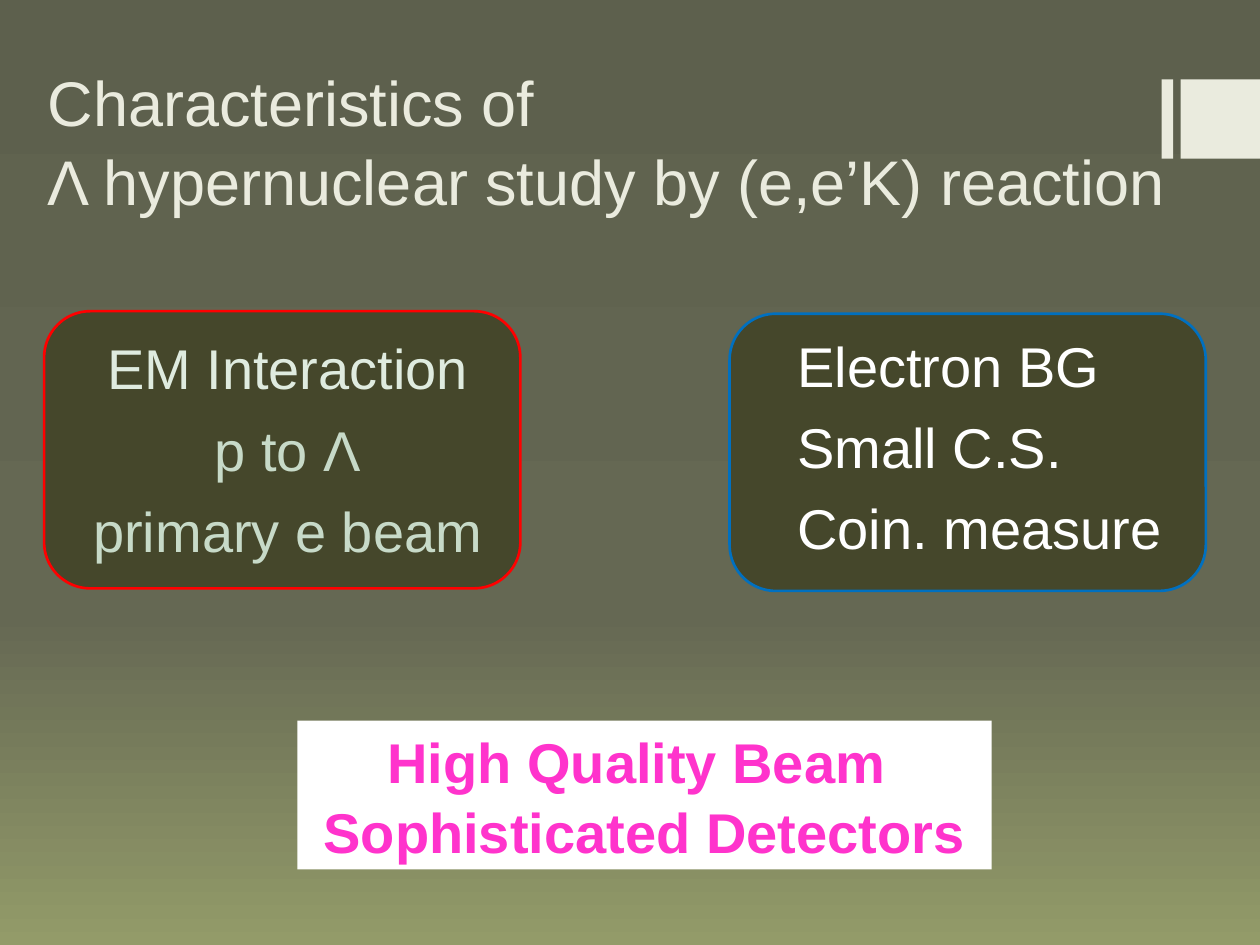
import copy

import pptx
import pptx.util
from pptx.dml.color import RGBColor
from pptx.enum.shapes import MSO_SHAPE
from pptx.enum.text import MSO_ANCHOR, MSO_AUTO_SIZE, PP_ALIGN
from pptx.util import Inches

# Content
TITLE = "Characteristics of \vΛ hypernuclear study by (e,e’K) reaction"
CREAM = "EAEBDE"
BACKGROUND = [(0, "5D604D"), (0.65, "656853"), (1, "939B69")]
MARKERS = [(9.22, 0.63, 0.09, 0.63), (9.37, 0.63, 0.63, 0.63)]
PANELS = [
    {
        "box": (0.35, 2.47, 3.78, 2.2), "border": "FF0000",
        "text_box": (0.35, 2.58, 3.82, 2.13), "align": PP_ALIGN.CENTER,
        "lines": [("EM Interaction", "DFEBDF"), ("p to Λ", "C7DAC8"),
                  ("primary e beam", "C7DAC8")],
    },
    {
        "box": (5.79, 2.49, 3.78, 2.2), "border": "0070C0",
        "text_box": (6.18, 2.56, 3.39, 2.13), "align": PP_ALIGN.LEFT,
        "lines": [("Electron BG", "FFFFFF"), ("Small C.S.", "FFFFFF"),
                  ("Coin. measure", "FFFFFF")],
    },
]
CONCLUSION_BOX = (2.36, 5.72, 5.51, 1.18)
CONCLUSION = [("High Quality Beam ", "FF33CC"), ("Sophisticated Detectors", "FF33CC")]


def rgb(value):
    return RGBColor.from_string(value)


def add_block(slide, kind, box, fill, border=None):
    block = slide.shapes.add_shape(kind, *map(Inches, box))
    block.shadow.inherit = False
    block.fill.solid()
    block.fill.fore_color.rgb = rgb(fill)
    if border:
        block.line.color.rgb = rgb(border)
        block.line.width = pptx.util.Pt(1.5)
    else:
        block.line.fill.background()
    return block


def write_lines(frame, lines, size, align, gap=0, margin=0, bold=False):
    frame.word_wrap = True
    for index, (text, color) in enumerate(lines):
        paragraph = frame.paragraphs[0] if index == 0 else frame.add_paragraph()
        paragraph.text = text
        paragraph.alignment = align
        paragraph.line_spacing = 1.04
        if index and gap:
            paragraph.space_before = pptx.util.Pt(gap)
        if margin:
            paragraph._p.get_or_add_pPr().set("marL", str(Inches(margin)))
        paragraph.font.name = "Arial"
        paragraph.font.size = pptx.util.Pt(size)
        paragraph.font.bold = bold
        paragraph.font.color.rgb = rgb(color)


def main():
    deck = pptx.Presentation()
    deck.slide_width, deck.slide_height = Inches(10), Inches(7.5)
    slide = deck.slides.add_slide(deck.slide_layouts[5])

    # Background: three stops, top to bottom
    backdrop = slide.background.fill
    backdrop.gradient()
    backdrop.gradient_angle = 270
    stop_list = slide.element.find(".//" + pptx.oxml.ns.qn("a:gsLst"))
    stop_list.append(copy.deepcopy(stop_list[0]))
    for stop, (position, color) in zip(backdrop.gradient_stops, BACKGROUND):
        stop.position = position
        stop.color.rgb = rgb(color)

    # Markers at the right edge
    for box in MARKERS:
        add_block(slide, MSO_SHAPE.RECTANGLE, box, CREAM)

    # Title
    title = slide.shapes.title
    title.left, title.top, title.width, title.height = map(Inches, (0.28, 0.52, 9.29, 1.26))
    title.text_frame.auto_size = MSO_AUTO_SIZE.NONE
    title.text_frame.vertical_anchor = MSO_ANCHOR.BOTTOM
    write_lines(title.text_frame, [(TITLE, CREAM)], 36, PP_ALIGN.LEFT)

    # Panels of advantages and difficulties
    for panel in PANELS:
        add_block(slide, MSO_SHAPE.ROUNDED_RECTANGLE, panel["box"], "45472B", panel["border"])
        label = slide.shapes.add_textbox(*map(Inches, panel["text_box"]))
        write_lines(label.text_frame, panel["lines"], 32, panel["align"], gap=6.5, margin=0.05)

    # Conclusion
    conclusion = add_block(slide, MSO_SHAPE.RECTANGLE, CONCLUSION_BOX, "FFFFFF")
    conclusion.text_frame.vertical_anchor = MSO_ANCHOR.MIDDLE
    write_lines(conclusion.text_frame, CONCLUSION, 32, PP_ALIGN.CENTER, bold=True)

    deck.save("out.pptx")


if __name__ == "__main__":
    main()
